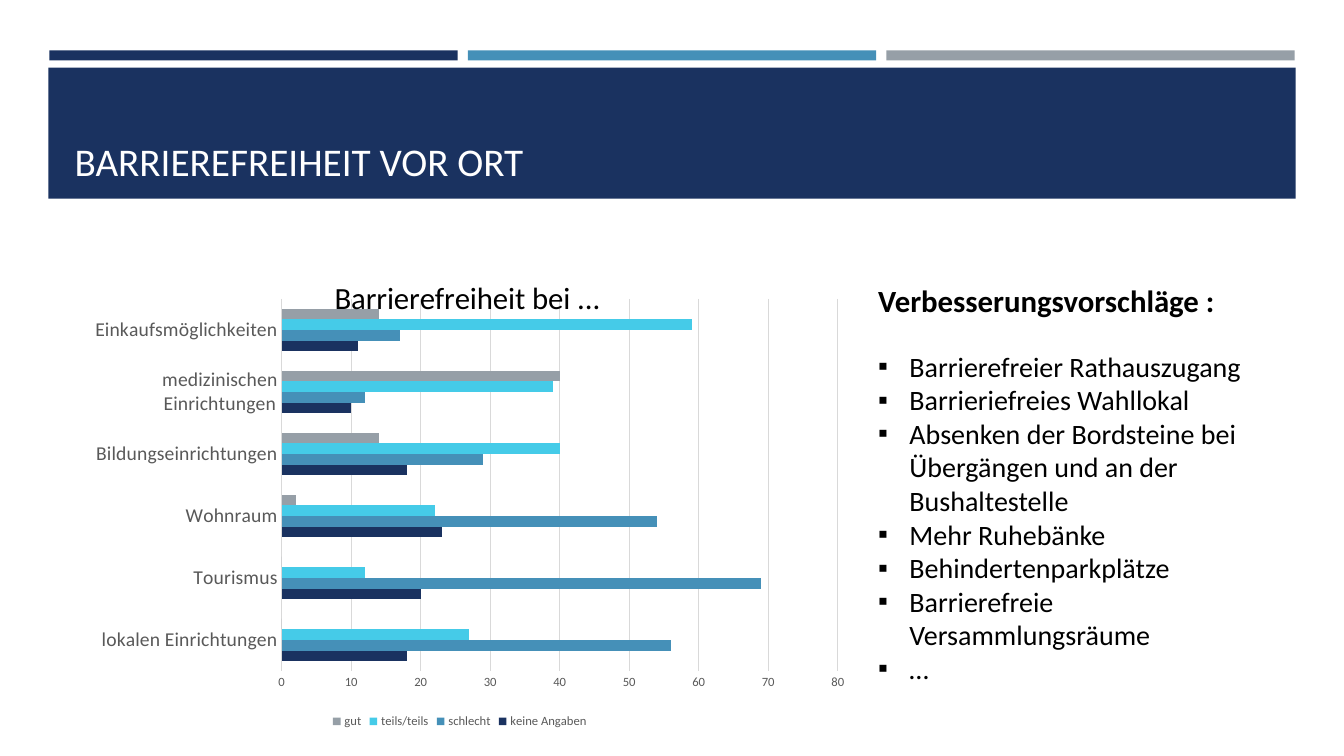
from lxml import etree
from pptx import Presentation
from pptx.chart.data import CategoryChartData
from pptx.dml.color import RGBColor
from pptx.enum.chart import XL_CHART_TYPE as ChartType
from pptx.enum.chart import XL_LEGEND_POSITION as LegendPosition
from pptx.enum.chart import XL_TICK_MARK as TickMark
from pptx.enum.shapes import MSO_SHAPE as Preset
from pptx.enum.text import MSO_ANCHOR as Anchor
from pptx.enum.text import MSO_AUTO_SIZE as AutoSize
from pptx.enum.text import PP_ALIGN as Align
from pptx.oxml.ns import qn
from pptx.util import Inches, Pt

FONT = "Calibri"
NAVY, BLUE, CYAN, GRAY = "1A3260", "4590B8", "45CBE8", "969FA7"
BLACK, WHITE, LABEL, GRID = "000000", "FFFFFF", "595959", "D9D9D9"

# Categories and values run from the bottom of the chart upwards
PLACES = ["lokalen Einrichtungen", "Tourismus", "Wohnraum",
          "Bildungseinrichtungen", "medizinischen Einrichtungen",
          "Einkaufsmöglichkeiten"]
RATINGS = [
    ("keine Angaben", NAVY, (18, 20, 23, 18, 10, 11)),
    ("schlecht", BLUE, (56, 69, 54, 29, 12, 17)),
    ("teils/teils", CYAN, (27, 12, 22, 40, 39, 59)),
    ("gut", GRAY, (0, 0, 2, 14, 40, 14)),
]
SUGGESTIONS = [
    "Barrierefreier Rathauszugang",
    "Barrieriefreies Wahllokal",
    "Absenken der Bordsteine bei Übergängen und an der Bushaltestelle",
    "Mehr Ruhebänke",
    "Behindertenparkplätze",
    "Barrierefreie Versammlungsräume",
    "…",
]


def rgb(color):
    return RGBColor.from_string(color)


def set_font(font, size, color, bold=False):
    font.name = FONT
    font.size = Pt(size)
    font.bold = bold
    font.color.rgb = rgb(color)


def place(shape, left, top, width, height):
    shape.left, shape.top = Inches(left), Inches(top)
    shape.width, shape.height = Inches(width), Inches(height)


def add_band(slide, left, top, width, height, color):
    band = slide.shapes.add_shape(Preset.RECTANGLE, Inches(left), Inches(top),
                                  Inches(width), Inches(height))
    band.shadow.inherit = False
    band.fill.solid()
    band.fill.fore_color.rgb = rgb(color)
    band.line.fill.background()
    # Bands lie behind the placeholders
    slide.shapes._spTree.insert(2, band._element)


def fill_title(title, text):
    place(title, 0.64, 0.77, 12.06, 1.11)
    frame = title.text_frame
    frame.text = text
    frame.auto_size = AutoSize.NONE
    frame.vertical_anchor = Anchor.BOTTOM
    frame.paragraphs[0].alignment = Align.LEFT
    set_font(frame.paragraphs[0].font, 28, WHITE)


def set_bullet(paragraph, bullet=None):
    props = paragraph._p.get_or_add_pPr()
    indent = Inches(0.31) if bullet else 0
    props.set("marL", str(indent))
    props.set("indent", str(-indent))
    if bullet:
        etree.SubElement(props, qn("a:buFont")).set("typeface", "Arial")
        etree.SubElement(props, qn("a:buChar")).set("char", bullet)
    else:
        etree.SubElement(props, qn("a:buNone"))


def fill_suggestions(body, heading, suggestions):
    place(body, 8.61, 2.74, 4.09, 4.14)
    frame = body.text_frame
    frame.word_wrap = True
    frame.auto_size = AutoSize.NONE
    frame.text = "\n".join([heading] + suggestions)
    for number, paragraph in enumerate(frame.paragraphs):
        is_heading = number == 0
        set_bullet(paragraph, None if is_heading else "▪")
        paragraph.space_before = Pt(0)
        paragraph.space_after = Pt(22 if is_heading else 0)
        set_font(paragraph.font, 22 if is_heading else 20, BLACK, is_heading)


def set_layout(parent, index, **settings):
    """Give a chart part a manual layout as its child at the given index."""
    for old in parent.findall(qn("c:layout")):
        parent.remove(old)
    layout = etree.Element(qn("c:layout"))
    manual = etree.SubElement(layout, qn("c:manualLayout"))
    for tag, value in settings.items():
        etree.SubElement(manual, qn(f"c:{tag}")).set("val", str(value))
    parent.insert(index, layout)


def format_axis(axis, size):
    axis.major_tick_mark = axis.minor_tick_mark = TickMark.NONE
    set_font(axis.tick_labels.font, size, LABEL)


def style_line(line, color):
    line.color.rgb = rgb(color)
    line.width = Pt(0.75)


def add_rating_chart(slide, heading):
    data = CategoryChartData()
    data.categories = PLACES
    for name, _, values in RATINGS:
        data.add_series(name, values)
    chart = slide.shapes.add_chart(
        ChartType.BAR_CLUSTERED, Inches(0.51), Inches(2.45),
        Inches(8.1), Inches(4.82), data).chart
    set_font(chart.font, 10, BLACK)

    # Heading
    chart.has_title = True
    title_text = chart.chart_title.text_frame
    title_text.text = heading
    set_font(title_text.paragraphs[0].font, 22, BLACK)
    set_layout(chart.chart_title._element, 1,
               xMode="edge", yMode="edge", x=0.34, y=0.05)

    # Bars
    plot = chart.plots[0]
    plot.vary_by_categories = False
    plot.gap_width = 182
    plot.overlap = 0
    for series, (_, color, _) in zip(plot.series, RATINGS):
        series.format.fill.solid()
        series.format.fill.fore_color.rgb = rgb(color)
    set_layout(chart._chartSpace.chart.plotArea, 0,
               layoutTarget="inner", xMode="edge", yMode="edge",
               x=0.282, y=0.107, w=0.681, h=0.766)

    # Axes and legend
    format_axis(chart.category_axis, 14)
    style_line(chart.category_axis.format.line, GRID)
    scale = chart.value_axis
    format_axis(scale, 9)
    scale.minimum_scale, scale.maximum_scale, scale.major_unit = 0, 80, 10
    scale.format.line.fill.background()
    style_line(scale.major_gridlines.format.line, GRID)
    chart.has_legend = True
    chart.legend.position = LegendPosition.BOTTOM
    chart.legend.include_in_layout = False
    set_font(chart.legend.font, 9, LABEL)


def main():
    deck = Presentation()
    deck.slide_width, deck.slide_height = Inches(13.33), Inches(7.5)
    slide = deck.slides.add_slide(deck.slide_layouts[1])

    # Header bands
    for column, color in enumerate((NAVY, BLUE, GRAY)):
        add_band(slide, 0.49 + column * 4.15, 0.5, 4.05, 0.1, color)
    add_band(slide, 0.48, 0.67, 12.37, 1.3, NAVY)

    # Content
    fill_title(slide.shapes.title, "BARRIEREFREIHEIT VOR ORT")
    add_rating_chart(slide, "Barrierefreiheit bei ...")
    fill_suggestions(slide.placeholders[1], "Verbesserungsvorschläge :",
                     SUGGESTIONS)
    deck.save("out.pptx")


if __name__ == "__main__":
    main()
